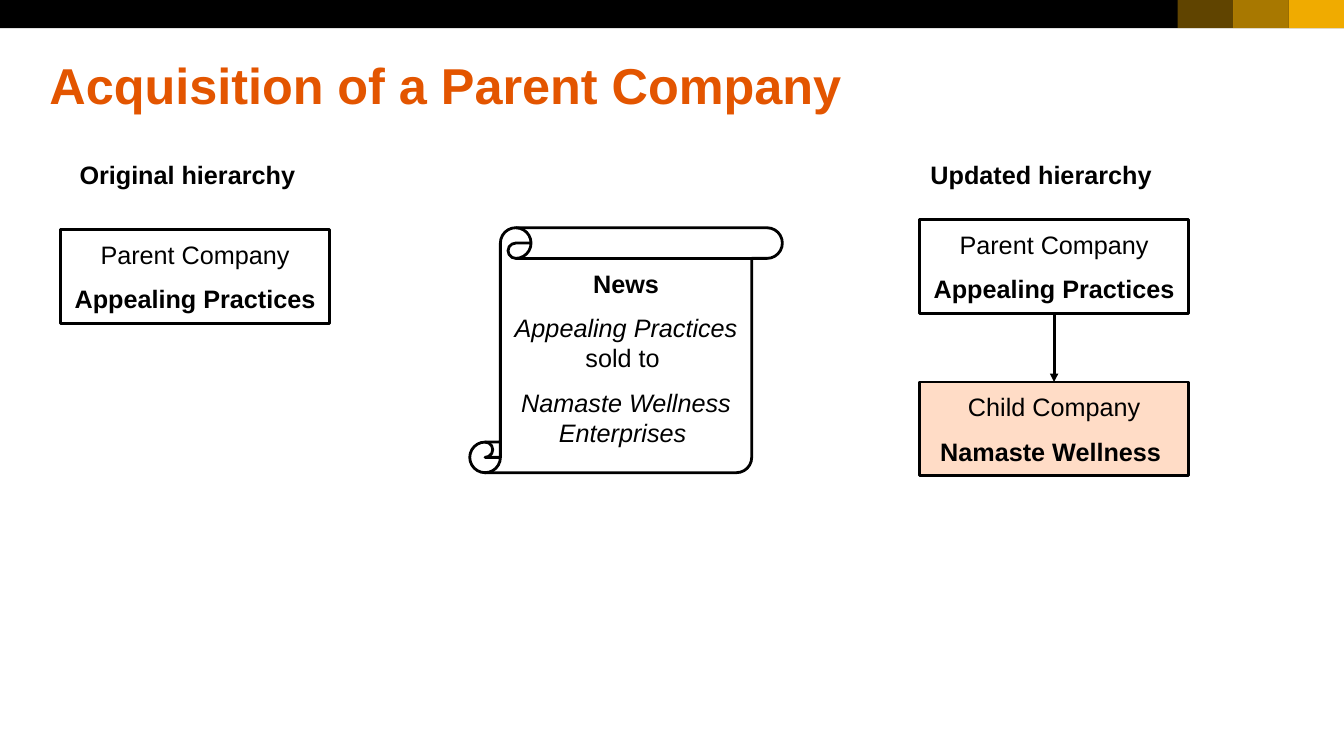
from lxml import etree
from pptx import Presentation
from pptx.dml.color import RGBColor
from pptx.enum import shapes, text
from pptx.oxml import ns
from pptx.util import Inches, Pt

BLACK = RGBColor(0x00, 0x00, 0x00)
GOLD = RGBColor(0xF0, 0xAB, 0x00)
ORANGE = RGBColor(0xE3, 0x55, 0x00)
PEACH = RGBColor(0xFF, 0xDC, 0xC6)

prs = Presentation()
prs.slide_width, prs.slide_height = Inches(13.33), Inches(7.5)
s = prs.slides.add_slide(prs.slide_layouts[6])


def add_shape(kind, x, y, w, h, fill=None):
    sp = s.shapes.add_shape(kind, Inches(x), Inches(y), Inches(w), Inches(h))
    sp.shadow.inherit = False
    if fill is None:
        sp.fill.background()
    else:
        sp.fill.solid()
        sp.fill.fore_color.rgb = fill
    sp.line.fill.background()
    return sp


def add_run(p, words, size=18, color=BLACK, bold=False, italic=False):
    r = p.add_run()
    r.text = words
    r.font.name = "Arial"
    r.font.size = Pt(size)
    r.font.color.rgb = color
    r.font.bold = bold
    r.font.italic = italic


RECT = shapes.MSO_SHAPE.RECTANGLE
SCROLL = shapes.MSO_SHAPE.VERTICAL_SCROLL

add_shape(RECT, 0, 0, 13.33, 0.28, BLACK)
for i, opacity in enumerate([40, 70, 100]):
    sp = add_shape(RECT, 11.68 + 0.55 * i, 0, 0.55, 0.28, GOLD)
    if opacity < 100:
        color = sp.fill._xPr.find(".//" + ns.qn("a:srgbClr"))
        etree.SubElement(color, ns.qn("a:alpha"), val=str(opacity * 1000))

title = s.shapes.add_textbox(Inches(0.49), Inches(0.54), Inches(11.89), Inches(0.61))
tf = title.text_frame
tf.word_wrap = True
tf.margin_left = tf.margin_right = tf.margin_top = tf.margin_bottom = 0
add_run(tf.paragraphs[0], "Acquisition of a Parent Company", 36, ORANGE, bold=True)

for x, heading in [(0.69, "Original hierarchy"), (9.13, "Updated hierarchy")]:
    tb = s.shapes.add_textbox(Inches(x), Inches(1.51), Inches(3.88), Inches(1.05))
    tf = tb.text_frame
    tf.word_wrap = True
    p = tf.paragraphs[0]
    p.line_spacing = 1.07
    p.space_after = Pt(8)
    add_run(p, heading, bold=True)

parent = [[("Parent Company", False, False)], [("Appealing Practices", True, False)]]
child = [[("Child Company", False, False)], [("Namaste Wellness ", True, False)]]
news = [
    [("News", True, False)],
    [("Appealing Practices ", False, True), ("sold to ", False, False)],
    [("Namaste Wellness Enterprises ", False, True)],
]
boxes = []
for kind, x, y, w, h, fill, paragraphs in [
    (RECT, 0.6, 2.28, 2.67, 0.93, None, parent),
    (SCROLL, 4.66, 2.26, 3.1, 2.43, None, news),
    (RECT, 9.12, 2.18, 2.67, 0.93, None, parent),
    (RECT, 9.12, 3.79, 2.67, 0.93, PEACH, child),
]:
    sp = add_shape(kind, x, y, w, h, fill)
    sp.line.color.rgb = BLACK
    sp.line.width = Pt(2)
    tf = sp.text_frame
    tf.word_wrap = True
    tf.vertical_anchor = text.MSO_ANCHOR.MIDDLE
    tf.margin_left = tf.margin_right = Inches(0.1)
    tf.margin_top = tf.margin_bottom = Inches(0.08)
    for i, runs in enumerate(paragraphs):
        p = tf.add_paragraph() if i else tf.paragraphs[0]
        p.alignment = text.PP_ALIGN.CENTER
        if i:
            p.space_before = Pt(10)
        for words, bold, italic in runs:
            add_run(p, words, bold=bold, italic=italic)
    boxes.append(sp)

arrow = s.shapes.add_connector(shapes.MSO_CONNECTOR.STRAIGHT, 0, 0, 0, 0)
arrow.begin_connect(boxes[2], 2)
arrow.end_connect(boxes[3], 0)
arrow.line.color.rgb = BLACK
arrow.line.width = Pt(2)
etree.SubElement(arrow.line._get_or_add_ln(), ns.qn("a:tailEnd"), type="triangle")
etree.SubElement(arrow._element.spPr, ns.qn("a:effectLst"))

prs.save("out.pptx")
